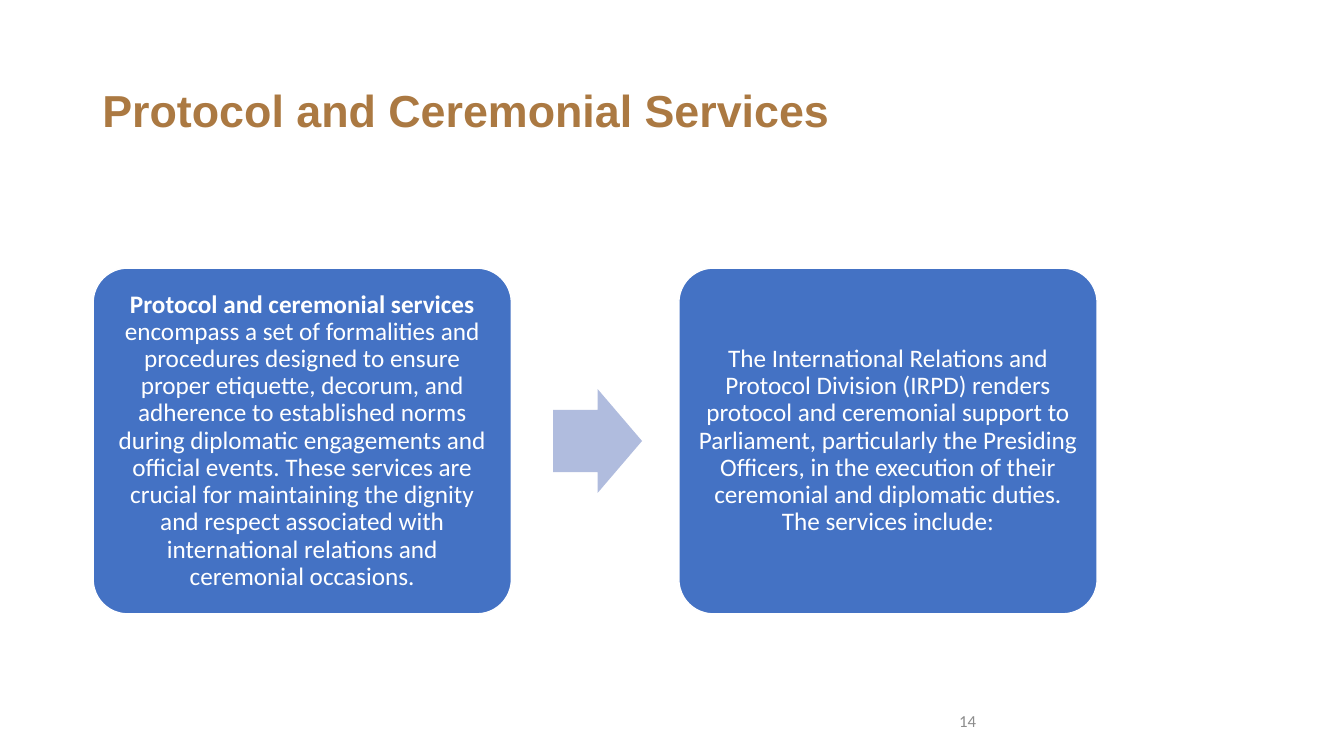
from dataclasses import dataclass

from pptx import Presentation
from pptx import util as u
from pptx.dml.color import RGBColor
from pptx.enum import shapes, text

Pt = u.Pt


@dataclass(frozen=True)
class Theme:
    title_color: str = "AB7942"
    card_color: str = "4472C4"
    arrow_color: str = "B0BCDE"
    number_color: str = "8C8C8C"
    white: str = "FFFFFF"
    title_font: str = "Arial"
    body_font: str = "Calibri"
    title_size: float = 32
    body_size: float = 18
    number_size: float = 12


THEME = Theme()

TITLE = "Protocol and Ceremonial Services"
CARDS = [
    [("Protocol and ceremonial services ", True),
     ("encompass a set of formalities and procedures designed to ensure proper "
      "etiquette, decorum, and adherence to established norms during diplomatic "
      "engagements and official events. These services are crucial for maintaining "
      "the dignity and respect associated with international relations and "
      "ceremonial occasions.", False)],
    [("The International Relations and Protocol Division (IRPD) renders protocol "
      "and ceremonial support to Parliament, particularly the Presiding Officers, "
      "in the execution of their ceremonial and diplomatic duties. The services "
      "include:", False)],
]


def write_text(shape, runs, *, font, size, color, align=text.PP_ALIGN.LEFT,
               line_spacing=1.0, inset=None):
    """Fill a shape with one paragraph of (wording, bold) runs."""
    frame = shape.text_frame
    frame.word_wrap = True
    frame.vertical_anchor = text.MSO_ANCHOR.MIDDLE
    if inset is not None:
        frame.margin_left = frame.margin_right = Pt(inset)
        frame.margin_top = frame.margin_bottom = Pt(inset)
    paragraph = frame.paragraphs[0]
    paragraph.alignment = align
    paragraph.line_spacing = line_spacing
    for wording, bold in runs:
        run = paragraph.add_run()
        run.text = wording
        run.font.name = font
        run.font.size = Pt(size)
        run.font.bold = bold
        run.font.color.rgb = RGBColor.from_string(color)


def add_block(slide, kind, left, top, width, height, *, fill, line=None):
    """Add a flat preset shape, with an outline if a line colour is given."""
    shape = slide.shapes.add_shape(kind, Pt(left), Pt(top), Pt(width), Pt(height))
    shape.shadow.inherit = False
    shape.fill.solid()
    shape.fill.fore_color.rgb = RGBColor.from_string(fill)
    if line:
        shape.line.color.rgb = RGBColor.from_string(line)
        shape.line.width = Pt(1)
    else:
        shape.line.fill.background()
    return shape


def add_title(slide, left, top, width, height):
    box = slide.shapes.add_textbox(Pt(left), Pt(top), Pt(width), Pt(height))
    write_text(box, [(TITLE, True)], font=THEME.title_font, size=THEME.title_size,
               color=THEME.title_color, line_spacing=0.9)


def add_process(slide, left, top, width, height):
    """Two cards at the ends of the box, with an arrow between them."""
    card_width = 298.8
    arrow_width, arrow_height = 63.4, 74.2

    # Cards
    for index, runs in enumerate(CARDS):
        card = add_block(slide, shapes.MSO_SHAPE.ROUNDED_RECTANGLE,
                         left + index * (width - card_width), top,
                         card_width, height, fill=THEME.card_color, line=THEME.white)
        card.adjustments[0] = 0.1
        write_text(card, runs, font=THEME.body_font, size=THEME.body_size,
                   color=THEME.white, align=text.PP_ALIGN.CENTER,
                   line_spacing=0.9, inset=5)

    # Arrow, a tenth of a card away from the first card
    arrow = add_block(slide, shapes.MSO_SHAPE.RIGHT_ARROW, left + 1.1 * card_width,
                      top + (height - arrow_height) / 2, arrow_width, arrow_height,
                      fill=THEME.arrow_color)
    arrow.adjustments[0] = 0.6
    arrow.adjustments[1] = 0.5


def add_page_number(slide, left, top, width, height):
    box = slide.shapes.add_textbox(Pt(left), Pt(top), Pt(width), Pt(height))
    write_text(box, [("14", False)], font=THEME.body_font, size=THEME.number_size,
               color=THEME.number_color)


def main():
    presentation = Presentation()
    presentation.slide_width = Pt(960)
    presentation.slide_height = Pt(540)
    slide = presentation.slides.add_slide(presentation.slide_layouts[6])

    add_title(slide, 66, 28.8, 718, 104.4)
    add_process(slide, 66.5, 191.5, 717.2, 247)
    add_page_number(slide, 678, 500.5, 216, 28.8)

    presentation.save("out.pptx")


if __name__ == "__main__":
    main()
